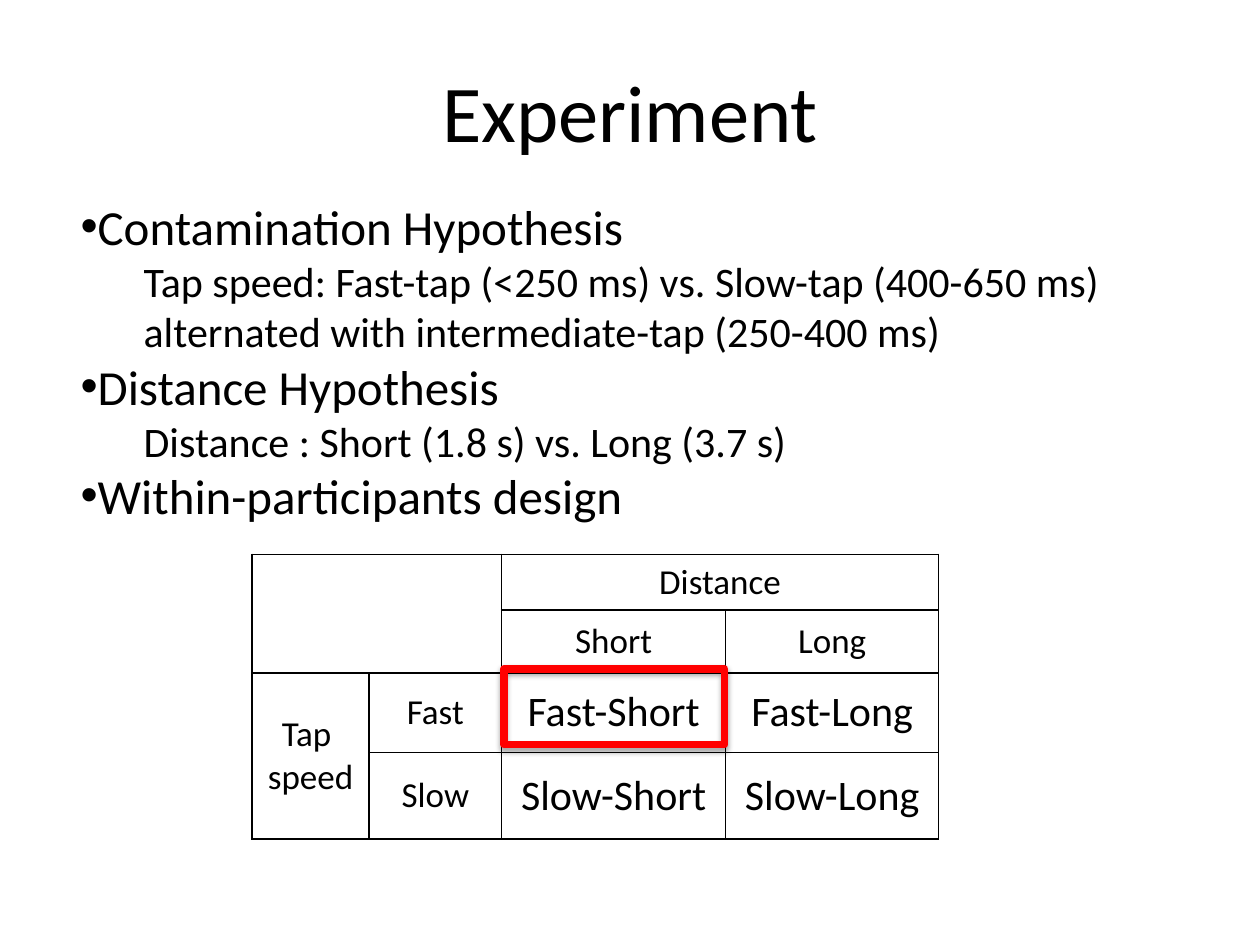
from dataclasses import dataclass

from lxml.etree import SubElement
from pptx import Presentation
from pptx.dml.color import RGBColor
from pptx.enum.shapes import MSO_SHAPE
from pptx.enum.text import MSO_ANCHOR, MSO_AUTO_SIZE, PP_ALIGN
from pptx.oxml.ns import qn
from pptx.util import Inches, Pt

FONT = "Calibri"
BLACK = "000000"
RED = "FF0000"


@dataclass
class Line:
    texts: list[str]
    size: int = 28
    level: int = 0
    left: float = 0
    first: float = 0
    mark: str = ""


@dataclass
class Entry:
    row: int
    col: int
    lines: list[str]
    size: int = 20
    rows: int = 1
    cols: int = 1


LINES = [
    Line(["Contamination Hypothesis"], mark="•"),
    Line(["Tap speed: Fast-tap (<250 ms) vs. Slow-tap (400-650 ms)",
          "alternated with intermediate-tap (250-400 ms)"], 24, 1, 0.5),
    Line(["Distance Hypothesis"], mark="•"),
    Line(["Distance : Short (1.8 s) vs. Long (3.7 s)"], 24, 2, 1, -0.5),
    Line(["Within-participants design"], mark="•"),
]

WIDTHS = [0.93, 1.05, 1.78, 1.69]
HEIGHTS = [0.44, 0.5, 0.63, 0.69]
ENTRIES = [
    Entry(0, 0, [], rows=2, cols=2),
    Entry(0, 2, ["Distance"], cols=2),
    Entry(1, 2, ["Short"]),
    Entry(1, 3, ["Long"]),
    Entry(2, 0, ["Tap ", "speed"], rows=2),
    Entry(2, 1, ["Fast"]),
    Entry(2, 2, ["Fast-Short"], 24),
    Entry(2, 3, ["Fast-Long"], 24),
    Entry(3, 1, ["Slow"]),
    Entry(3, 2, ["Slow-Short"], 24),
    Entry(3, 3, ["Slow-Long"], 24),
]


def paint(fill, tone: str) -> None:
    fill.solid()
    fill.fore_color.rgb = RGBColor.from_string(tone)


def place(shape, left: float, top: float, width: float, height: float) -> None:
    shape.left, shape.top = Inches(left), Inches(top)
    shape.width, shape.height = Inches(width), Inches(height)


def add_text(para, text: str, size: int) -> None:
    run = para.add_run()
    run.text = text
    run.font.name = FONT
    run.font.size = Pt(size)
    paint(run.font.fill, BLACK)


def next_para(frame, index: int):
    return frame.add_paragraph() if index else frame.paragraphs[0]


def add_line(para, line: Line) -> None:
    para.level = line.level
    para.alignment = PP_ALIGN.LEFT
    para.space_before = Pt(0)
    props = para._p.get_or_add_pPr()
    props.set("marL", str(Inches(line.left)))
    props.set("indent", str(Inches(line.first)))
    if line.mark:
        SubElement(props, qn("a:buChar"), char=line.mark)
    else:
        SubElement(props, qn("a:buNone"))
    for index, text in enumerate(line.texts):
        if index:
            para.add_line_break()
        add_text(para, text, line.size)


def add_tone(parent, tone: str):
    return SubElement(parent, qn("a:srgbClr"), val=tone)


def frame_cell(cell) -> None:
    props = cell._tc.get_or_add_tcPr()
    for side in ("lnL", "lnR", "lnT", "lnB"):
        edge = SubElement(props, qn(f"a:{side}"), w=str(Pt(1)))
        add_tone(SubElement(edge, qn("a:solidFill")), BLACK)
    cell.fill.background()


def add_entry(table, entry: Entry) -> None:
    cell = table.cell(entry.row, entry.col)
    if entry.rows * entry.cols > 1:
        cell.merge(table.cell(entry.row + entry.rows - 1,
                              entry.col + entry.cols - 1))
    cell.vertical_anchor = MSO_ANCHOR.MIDDLE
    for index, text in enumerate(entry.lines):
        para = next_para(cell.text_frame, index)
        para.alignment = PP_ALIGN.CENTER
        add_text(para, text, entry.size)


def add_grid(slide) -> None:
    table = slide.shapes.add_table(
        len(HEIGHTS), len(WIDTHS), Inches(2), Inches(4.4),
        Inches(sum(WIDTHS)), Inches(sum(HEIGHTS))).table
    table.first_row = table.horz_banding = False
    for col, width in zip(table.columns, WIDTHS):
        col.width = Inches(width)
    for row, height in zip(table.rows, HEIGHTS):
        row.height = Inches(height)
    for cell in table.iter_cells():
        frame_cell(cell)
    for entry in ENTRIES:
        add_entry(table, entry)


def add_focus(slide) -> None:
    box = slide.shapes.add_shape(MSO_SHAPE.RECTANGLE, 0, 0, 0, 0)
    place(box, 4, 5.31, 1.75, 0.6)
    box.fill.background()
    paint(box.line.fill, RED)
    box.line.width = Pt(4.5)
    # Soft shadow straight below the frame
    box.shadow.inherit = False
    effects = box._element.spPr.find(qn("a:effectLst"))
    shade = SubElement(effects, qn("a:outerShdw"), blurRad=str(Pt(3.1)),
                       dist=str(Pt(1.8)), dir="5400000", rotWithShape="0")
    SubElement(add_tone(shade, BLACK), qn("a:alpha"), val="35000")


def main() -> None:
    deck = Presentation()
    deck.slide_width, deck.slide_height = Inches(10), Inches(7.5)
    slide = deck.slides.add_slide(deck.slide_layouts[1])
    paint(slide.background.fill, "FFFFFF")

    # Title
    title = slide.shapes.title
    place(title, 1, 0.4, 8, 0.95)
    title.text_frame.vertical_anchor = MSO_ANCHOR.MIDDLE
    head = title.text_frame.paragraphs[0]
    head.alignment = PP_ALIGN.CENTER
    add_text(head, "Experiment", 46)

    # List of hypotheses
    body = slide.placeholders[1]
    place(body, 0.54, 1.51, 9.46, 4.48)
    body.text_frame.auto_size = MSO_AUTO_SIZE.NONE
    for index, line in enumerate(LINES):
        add_line(next_para(body.text_frame, index), line)

    # Design table and the marked cell
    add_grid(slide)
    add_focus(slide)
    deck.save("out.pptx")


if __name__ == "__main__":
    main()
